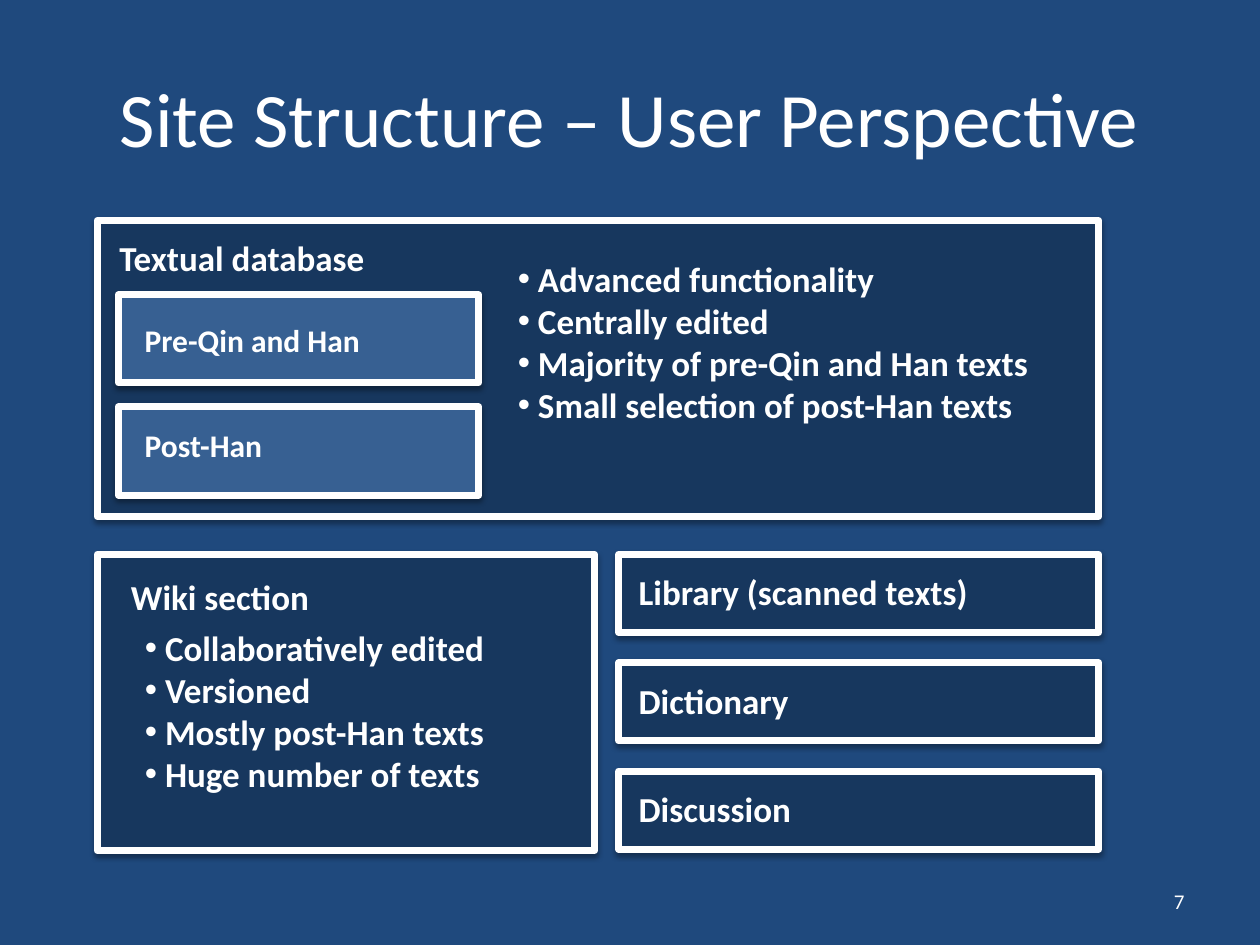
from lxml import etree
from pptx import Presentation
from pptx.dml.color import RGBColor
from pptx.enum import shapes, text
from pptx.oxml.ns import qn
from pptx.util import Inches, Pt

# Content: boxes are (left, top, width, height), labels (left, top, width)
TITLE = "Site Structure – User Perspective"
NUMBER = "7"
PANELS = [(0.77, 1.75, 7.95, 2.35), (0.77, 4.4, 3.95, 2.35)]
HEADS = [("Textual database", 0.85, 1.83), ("Wiki section", 0.94, 4.52)]
ERAS = [("Pre-Qin and Han", 2.34, 2.5), ("Post-Han", 3.23, 3.33)]
TOOLS = ["Library (scanned texts)", "Dictionary", "Discussion"]
LISTS = [
    ((4.01, 1.99, 4.47, 1.78),
     ["Advanced functionality", "Centrally edited",
      "Majority of pre-Qin and Han texts",
      "Small selection of post-Han texts"]),
    ((1.05, 4.92, 3.67, 1.45),
     ["Collaboratively edited", "Versioned", "Mostly post-Han texts",
      "Huge number of texts"]),
]

THEME = {
    "font": "Calibri", "back": "1F497D", "panel": "17375E", "era": "376092",
    "ink": "FFFFFF", "shade": "000000",
    "title": 44, "head": 20, "label": 18, "number": 12, "line": 4,
}
INDENT = 0.16
TOOL_TOP, TOOL_STEP, TOOL_HIGH = 4.4, 0.86, 0.62


def color(name):
    return RGBColor.from_string(THEME[name])


def node(parent, tag, **attrs):
    return etree.SubElement(parent, qn(tag), attrs)


def style(para, size, bold=True, align=text.PP_ALIGN.LEFT):
    para.alignment = align
    font = para.font
    font.name, font.size, font.bold = THEME["font"], Pt(THEME[size]), bold
    font.color.rgb = color("ink")


def place(shape, box):
    shape.left, shape.top, shape.width, shape.height = map(Inches, box)


def add_box(slide, box, fill):
    shape = slide.shapes.add_shape(shapes.MSO_SHAPE.RECTANGLE, *map(Inches, box))
    shape.fill.solid()
    shape.fill.fore_color.rgb = color(fill)
    shape.line.color.rgb = color("ink")
    shape.line.width = Pt(THEME["line"])
    props = shape.element.spPr
    node(props.find(qn("a:ln")), "a:round")
    # Soft shadow straight below
    shape.shadow.inherit = False
    shadow = node(props.find(qn("a:effectLst")), "a:outerShdw",
                  blurRad=str(Pt(3.1)), dist=str(Pt(1.8)), dir="5400000",
                  rotWithShape="0")
    tint = node(shadow, "a:srgbClr", val=THEME["shade"])
    node(tint, "a:alpha", val="35000")


def add_label(slide, words, left, top, size="head", width=3.87):
    high = 0.44 if size == "head" else 0.4
    frame = slide.shapes.add_textbox(
        *map(Inches, (left, top, width, high))).text_frame
    frame.word_wrap = True
    frame.auto_size = text.MSO_AUTO_SIZE.SHAPE_TO_FIT_TEXT
    frame.text = words
    style(frame.paragraphs[0], size)


def fill_list(body, box, items):
    place(body, box)
    frame = body.text_frame
    frame.auto_size = text.MSO_AUTO_SIZE.NONE
    frame.text = "\n".join(items)
    for para in frame.paragraphs:
        props = para._p.get_or_add_pPr()
        props.set("marL", str(Inches(INDENT)))
        props.set("indent", str(-Inches(INDENT)))
        node(props, "a:buFont", typeface="Arial")
        node(props, "a:buChar", char="•")
        para.space_before = Pt(0)
        style(para, "head")
    # Bring the list in front of its panel
    body.element.getparent().append(body.element)


def add_number(slide):
    box = slide.shapes.add_textbox(*map(Inches, (7.17, 6.95, 2.33, 0.4)))
    frame = box.text_frame
    frame.word_wrap = True
    frame.vertical_anchor = text.MSO_ANCHOR.MIDDLE
    para = frame.paragraphs[0]
    style(para, "number", False, text.PP_ALIGN.RIGHT)
    field = node(para._p, "a:fld", type="slidenum",
                 id="{B6F15528-21DE-4FAA-801E-634DDDAF4B2B}")
    node(field, "a:rPr", lang="en-US")
    node(field, "a:t").text = NUMBER


def main():
    deck = Presentation()
    deck.slide_width, deck.slide_height = Inches(10), Inches(7.5)
    # The deck numbers this slide as the seventh
    deck.element.set("firstSlideNum", NUMBER)
    slide = deck.slides.add_slide(deck.slide_layouts.get_by_name("Two Content"))
    slide.background.fill.solid()
    slide.background.fill.fore_color.rgb = color("back")

    # Title
    title = slide.shapes.title
    place(title, (0.5, 0.3, 9, 1.25))
    title.text_frame.text = TITLE
    title.text_frame.vertical_anchor = text.MSO_ANCHOR.MIDDLE
    style(title.text_frame.paragraphs[0], "title", False, text.PP_ALIGN.CENTER)

    # Main panels with their headings
    for box, head in zip(PANELS, HEADS):
        add_box(slide, box, "panel")
        add_label(slide, *head)

    # Eras inside the database panel
    for words, top, label in ERAS:
        add_box(slide, (0.94, top, 2.86, 0.7), "era")
        add_label(slide, words, 1.05, label, "label")

    # Bulleted lists
    for spot, (box, items) in zip((1, 2), LISTS):
        fill_list(slide.placeholders[spot], box, items)

    # Tools at the lower right
    for row, words in enumerate(TOOLS):
        top = TOOL_TOP + row * TOOL_STEP
        add_box(slide, (4.91, top, 3.81, TOOL_HIGH), "panel")
        add_label(slide, words, 4.97, top + 0.08, width=3.75)

    add_number(slide)
    deck.save("out.pptx")


if __name__ == "__main__":
    main()
